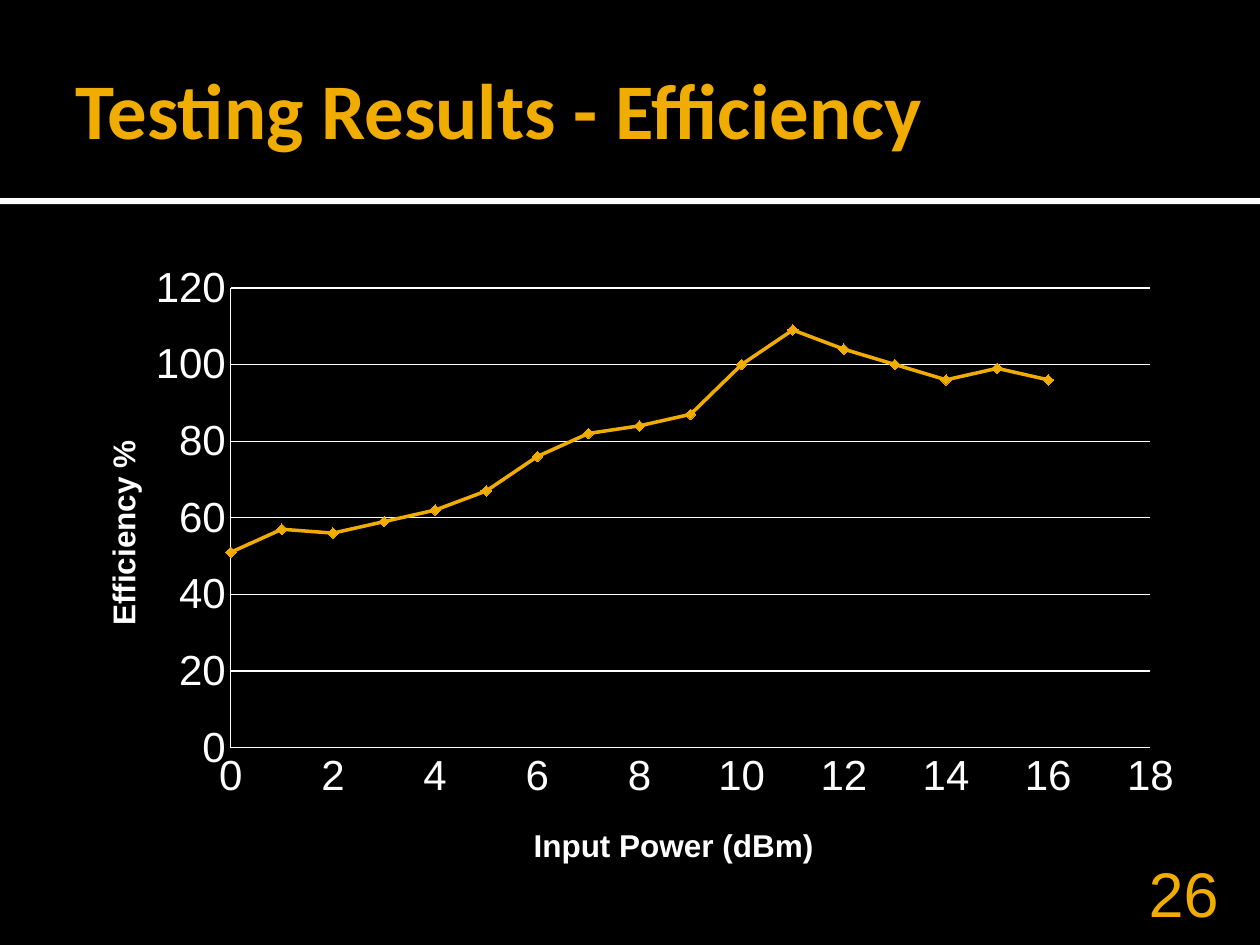
from dataclasses import dataclass

from lxml import etree
from pptx import Presentation
from pptx.chart.data import XyChartData
from pptx.dml.color import RGBColor
from pptx.enum.chart import XL_CHART_TYPE, XL_MARKER_STYLE, XL_TICK_MARK
from pptx.enum.shapes import MSO_SHAPE
from pptx.enum.text import MSO_ANCHOR, PP_ALIGN
from pptx.oxml.ns import qn
from pptx.util import Inches, Pt

SCATTER_LINES = XL_CHART_TYPE.XY_SCATTER_LINES
DIAMOND = XL_MARKER_STYLE.DIAMOND
NO_TICK = XL_TICK_MARK.NONE
RECTANGLE = MSO_SHAPE.RECTANGLE
MIDDLE, BOTTOM = MSO_ANCHOR.MIDDLE, MSO_ANCHOR.BOTTOM
LEFT, RIGHT = PP_ALIGN.LEFT, PP_ALIGN.RIGHT


@dataclass(frozen=True)
class Theme:
    black: RGBColor = RGBColor(0x00, 0x00, 0x00)
    white: RGBColor = RGBColor(0xFF, 0xFF, 0xFF)
    gold: RGBColor = RGBColor(0xF0, 0xAD, 0x00)
    heading_font: str = "Calibri"
    body_font: str = "Arial"
    title_size: float = 45
    number_size: float = 36
    tick_size: float = 24
    axis_title_size: float = 18


@dataclass(frozen=True)
class Band:
    top: float
    height: float
    color: RGBColor


@dataclass(frozen=True)
class AxisFormat:
    title: str
    maximum: int
    step: int
    gridlines: bool
    title_position: dict[str, float]


THEME = Theme()
BANDS = [Band(1.57, 0.05, THEME.white), Band(0, 1.57, THEME.black)]
POWER_AXIS = AxisFormat("Input Power (dBm)", 18, 2, False, {"x": 0.41, "y": 0.9})
EFFICIENCY_AXIS = AxisFormat("Efficiency %", 120, 20, True, {"x": 0.03, "y": 0.29})
PLOT_POSITION = {"x": 0.148, "y": 0.057, "w": 0.811, "h": 0.73}
EFFICIENCY = [51, 57, 56, 59, 62, 67, 76, 82, 84, 87, 100, 109, 104, 100, 96, 99, 96]


def apply(target, values: dict) -> None:
    for name, value in values.items():
        setattr(target, name, value)


def format_font(font, name: str, size: float, color: RGBColor, bold: bool) -> None:
    apply(font, {"name": name, "size": Pt(size), "bold": bold})
    font.color.rgb = color


def format_line(line, color: RGBColor, width: float) -> None:
    line.color.rgb = color
    line.width = Pt(width)


def place(shape, left: float, top: float, width: float, height: float) -> None:
    edges = {"left": left, "top": top, "width": width, "height": height}
    apply(shape, {name: Inches(value) for name, value in edges.items()})


def write_text(shape, text: str, frame_format: dict, alignment, font_format: tuple) -> None:
    frame = shape.text_frame
    apply(frame, {"word_wrap": True, **frame_format})
    para = frame.paragraphs[0]
    para.alignment = alignment
    span = para.add_run()
    span.text = text
    format_font(span.font, *font_format)


def add_band(slide, band: Band, width: int) -> None:
    shape = slide.shapes.add_shape(
        RECTANGLE, 0, Inches(band.top), width, Inches(band.height)
    )
    shape.shadow.inherit = False
    shape.fill.solid()
    shape.fill.fore_color.rgb = band.color
    shape.line.fill.background()
    slide.shapes.title.element.addprevious(shape.element)


def set_layout(parent, position: dict[str, float], inner: bool = False) -> None:
    layout = parent.find(qn("c:layout"))
    if layout is None:
        layout = etree.Element(qn("c:layout"))
        parent.insert(0 if inner else 1, layout)
    manual = etree.SubElement(layout, qn("c:manualLayout"))
    settings = {"layoutTarget": "inner"} if inner else {}
    settings.update({"xMode": "edge", "yMode": "edge"})
    settings.update({name: str(value) for name, value in position.items()})
    for name, value in settings.items():
        etree.SubElement(manual, qn(f"c:{name}")).set("val", value)


def format_axis(axis, axis_format: AxisFormat) -> None:
    apply(axis, {
        "minimum_scale": 0,
        "maximum_scale": axis_format.maximum,
        "major_unit": axis_format.step,
        "major_tick_mark": NO_TICK,
        "minor_tick_mark": NO_TICK,
        "has_major_gridlines": axis_format.gridlines,
        "has_title": True,
    })
    format_line(axis.format.line, THEME.white, 0.75)
    if axis_format.gridlines:
        format_line(axis.major_gridlines.format.line, THEME.white, 0.75)
    apply(axis.tick_labels, {"number_format": "General", "number_format_is_linked": False})
    format_font(axis.tick_labels.font, THEME.body_font, THEME.tick_size, THEME.white, False)
    span = axis.axis_title.text_frame.paragraphs[0].add_run()
    span.text = axis_format.title
    format_font(span.font, THEME.body_font, THEME.axis_title_size, THEME.white, True)
    set_layout(axis.axis_title.element, axis_format.title_position)


def add_efficiency_chart(slide) -> None:
    data = XyChartData()
    points = data.add_series("Series 1")
    for power, efficiency in enumerate(EFFICIENCY):
        points.add_data_point(power, efficiency)
    frame = slide.shapes.add_chart(
        SCATTER_LINES, Inches(0.5), Inches(2), Inches(9), Inches(5), data
    )
    chart = frame.chart
    apply(chart, {"has_title": False, "has_legend": False})
    format_font(chart.font, THEME.heading_font, 10, THEME.white, False)
    chart.plots[0].vary_by_categories = False
    format_axis(chart.category_axis, POWER_AXIS)
    format_axis(chart.value_axis, EFFICIENCY_AXIS)
    set_layout(chart.element.find(f".//{qn('c:plotArea')}"), PLOT_POSITION, inner=True)

    series = chart.plots[0].series[0]
    series.smooth = False
    format_line(series.format.line, THEME.gold, 2)
    apply(series.marker, {"style": DIAMOND, "size": 6})
    series.marker.format.fill.solid()
    series.marker.format.fill.fore_color.rgb = THEME.gold
    format_line(series.marker.format.line, THEME.gold, 0.75)


def main() -> None:
    deck = Presentation()
    apply(deck, {"slide_width": Inches(10), "slide_height": Inches(7.5)})
    slide = deck.slides.add_slide(deck.slide_layouts[5])
    slide.background.fill.solid()
    slide.background.fill.fore_color.rgb = THEME.black
    for band in BANDS:
        add_band(slide, band, deck.slide_width)

    title = slide.shapes.title
    place(title, 0.5, 0.17, 9, 1.37)
    write_text(
        title, "Testing Results - Efficiency",
        {"vertical_anchor": MIDDLE, "margin_left": Inches(0.1), "margin_right": Inches(0.05)},
        LEFT, (THEME.heading_font, THEME.title_size, THEME.gold, True),
    )
    number_box = slide.shapes.add_textbox(Inches(8.97), Inches(7.08), Inches(0.8), Inches(0.3))
    write_text(
        number_box, "26", {"vertical_anchor": BOTTOM, "margin_bottom": 0},
        RIGHT, (THEME.body_font, THEME.number_size, THEME.gold, False),
    )
    add_efficiency_chart(slide)
    deck.save("out.pptx")


if __name__ == "__main__":
    main()
